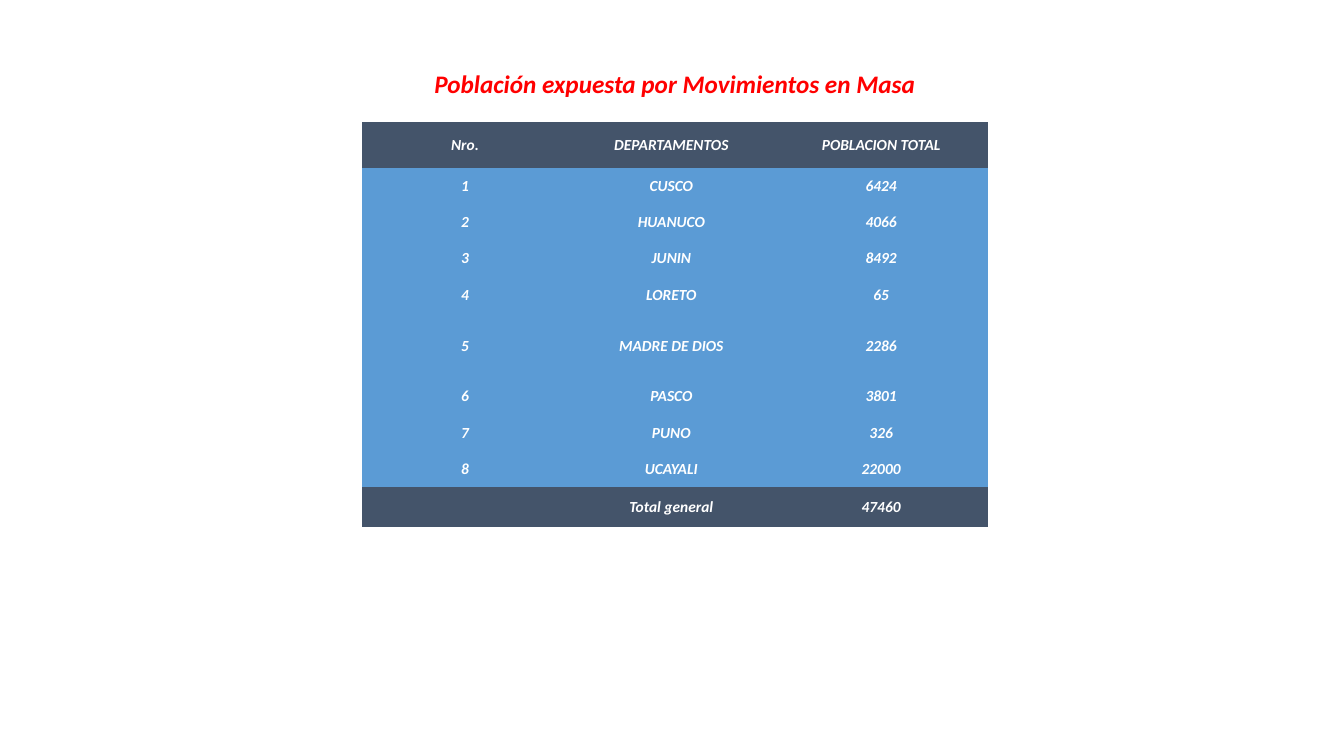
from dataclasses import dataclass

from pptx import Presentation
from pptx.dml.color import RGBColor
from pptx.enum.text import MSO_ANCHOR, PP_ALIGN
from pptx.util import Pt

CENTER = PP_ALIGN.CENTER
MIDDLE = MSO_ANCHOR.MIDDLE
TITLE_ONLY = 5
NO_STYLE = "{2D5ABB26-0587-4C30-8999-92F81FD0307C}"


@dataclass(frozen=True)
class Theme:
    font: str = "Calibri"
    title_size: float = 18
    cell_size: float = 11
    title: str = "FF0000"
    cell_text: str = "FFFFFF"
    band: str = "44546A"
    body: str = "5B9BD5"


THEME = Theme()
HEADER = ("Nro.", "DEPARTAMENTOS", "POBLACION TOTAL")
POPULATION = (
    ("CUSCO", 6424),
    ("HUANUCO", 4066),
    ("JUNIN", 8492),
    ("LORETO", 65),
    ("MADRE DE DIOS", 2286),
    ("PASCO", 3801),
    ("PUNO", 326),
    ("UCAYALI", 22000),
)
COLUMN_WIDTHS = (147.4, 147.4, 152.4)
HEADER_HEIGHT, ROW_HEIGHT, TALL_HEIGHT, TOTAL_HEIGHT = 32.6, 25.9, 46.8, 28.8


def format_text(tf, size, color):
    for p in tf.paragraphs:
        p.alignment = CENTER
        for r in p.runs:
            r.font.name = THEME.font
            r.font.size = Pt(size)
            r.font.bold = r.font.italic = True
            r.font.color.rgb = RGBColor.from_string(color)


def set_title(slide, text, left, top, width, height):
    sp = slide.shapes.title
    sp.left, sp.top, sp.width, sp.height = Pt(left), Pt(top), Pt(width), Pt(height)
    tf = sp.text_frame
    tf.text = text
    tf.word_wrap = False
    tf.vertical_anchor = MIDDLE
    format_text(tf, THEME.title_size, THEME.title)


def fill_cell(cell, text, color):
    cell.fill.solid()
    cell.fill.fore_color.rgb = RGBColor.from_string(color)
    cell.margin_left = cell.margin_right = cell.margin_top = Pt(0.75)
    cell.margin_bottom = Pt(0)
    cell.vertical_anchor = MIDDLE
    cell.text_frame.text = text
    format_text(cell.text_frame, THEME.cell_size, THEME.cell_text)


def add_population_table(slide, left, top):
    total = sum(count for _, count in POPULATION)
    rows = [HEADER]
    rows += [(str(i), name, str(count)) for i, (name, count) in enumerate(POPULATION, 1)]
    rows.append(("", "Total general", str(total)))
    heights = [HEADER_HEIGHT]
    heights += [TALL_HEIGHT if name == "MADRE DE DIOS" else ROW_HEIGHT for name, _ in POPULATION]
    heights.append(TOTAL_HEIGHT)

    frame = slide.shapes.add_table(
        len(rows), len(HEADER), Pt(left), Pt(top), Pt(sum(COLUMN_WIDTHS)), Pt(sum(heights))
    )
    table = frame.table
    table.horz_banding = False
    for style in frame.element.iter("{*}tableStyleId"):
        style.text = NO_STYLE
    for column, width in zip(table.columns, COLUMN_WIDTHS):
        column.width = Pt(width)
    for i, (values, height) in enumerate(zip(rows, heights)):
        table.rows[i].height = Pt(height)
        color = THEME.band if i in (0, len(rows) - 1) else THEME.body
        for j, value in enumerate(values):
            fill_cell(table.cell(i, j), value, color)


def main():
    prs = Presentation()
    prs.slide_width, prs.slide_height = Pt(960), Pt(540)
    slide = prs.slides.add_slide(prs.slide_layouts[TITLE_ONLY])
    set_title(slide, "Población expuesta por Movimientos en Masa", 301, 45.4, 362, 29)
    add_population_table(slide, 258.5, 87.1)
    prs.save("out.pptx")


if __name__ == "__main__":
    main()
